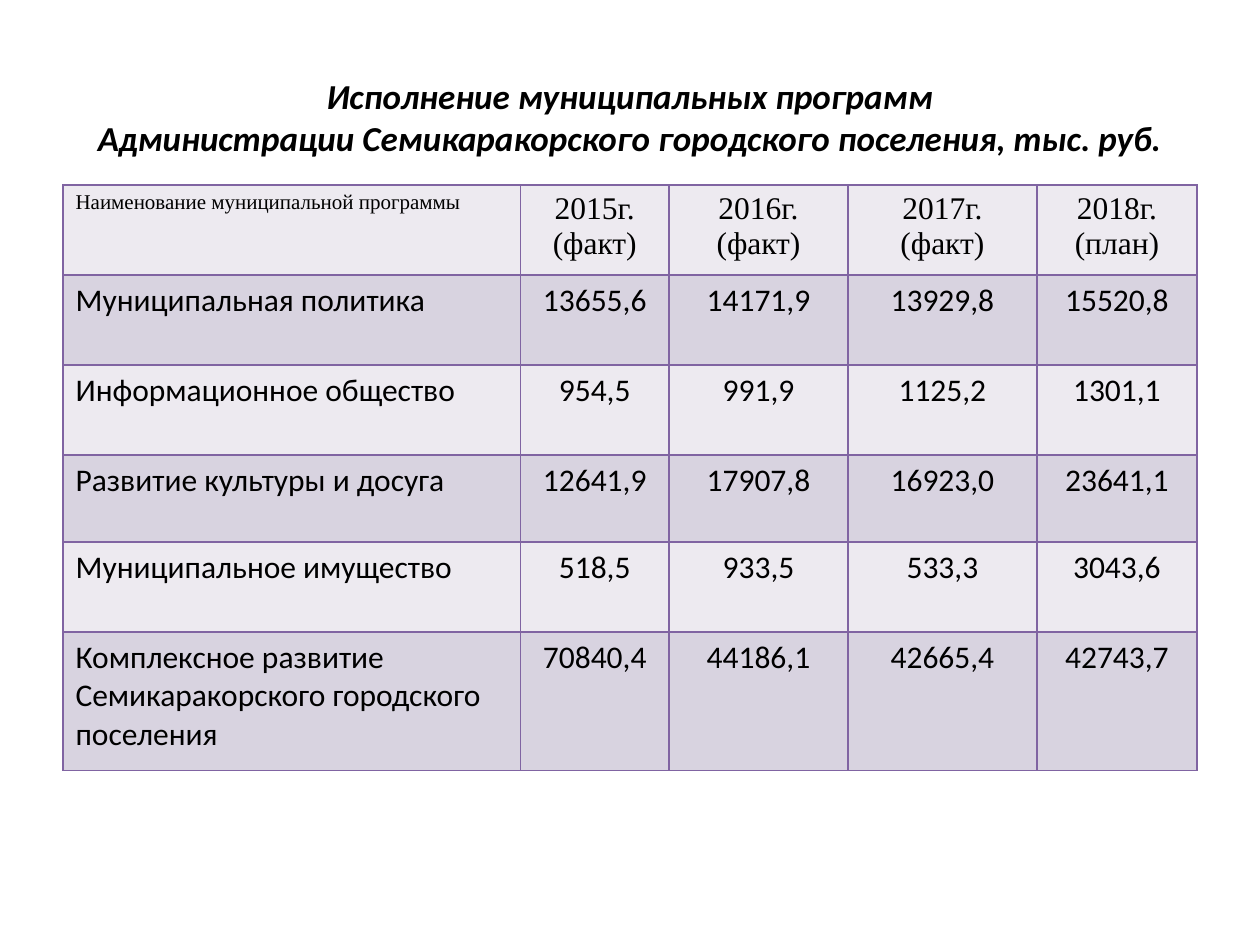
from lxml import etree
from pptx import Presentation
from pptx.dml.color import RGBColor
from pptx.enum.text import MSO_ANCHOR, PP_ALIGN
from pptx.oxml.ns import qn
from pptx.util import Pt

LEFT, CENTER = PP_ALIGN.LEFT, PP_ALIGN.CENTER
MIDDLE = MSO_ANCHOR.MIDDLE
BLACK = RGBColor(0x00, 0x00, 0x00)
PURPLE = RGBColor(0x80, 0x64, 0xA2)
PALE = RGBColor(0xED, 0xEA, 0xF0)
LILAC = RGBColor(0xD8, 0xD3, 0xE0)

HEAD = {"name": "Calibri", "size": Pt(20), "bold": True, "italic": True}
LABEL = {"name": "Times New Roman", "size": Pt(12), "bold": False}
YEAR = {"name": "Times New Roman", "size": Pt(18), "bold": False}
BODY = {"name": "Calibri", "size": Pt(18), "bold": False}

TITLE = ("Исполнение муниципальных программ\v"
         "Администрации Семикаракорского городского поселения, тыс. руб.")
ROWS = [
    ("Наименование муниципальной программы",
     "2015г. (факт)", "2016г. (факт)", "2017г. (факт)", "2018г. (план)"),
    ("Муниципальная политика", "13655,6", "14171,9", "13929,8", "15520,8"),
    ("Информационное общество", "954,5", "991,9", "1125,2", "1301,1"),
    ("Развитие культуры и досуга", "12641,9", "17907,8", "16923,0", "23641,1"),
    ("Муниципальное имущество", "518,5", "933,5", "533,3", "3043,6"),
    ("Комплексное развитие Семикаракорского городского поселения",
     "70840,4", "44186,1", "42665,4", "42743,7"),
]
WIDTHS = [261.4, 85, 102.2, 108, 91.4]
HEIGHTS = [51.5, 51.5, 51.5, 49.7, 51.5, 79.2]


def write(frame, text, align, style):
    """Fill a text frame with one styled paragraph."""
    para = frame.paragraphs[0]
    para.text = text
    para.alignment = align
    for run in para.runs:
        for key, value in style.items():
            setattr(run.font, key, value)
        run.font.color.rgb = BLACK


def edge(cell):
    """Draw the four borders of a cell."""
    props = cell._tc.get_or_add_tcPr()
    for spot, side in enumerate(("lnL", "lnR", "lnT", "lnB")):
        line = etree.Element(qn(f"a:{side}"), w=str(Pt(1)))
        fill = etree.SubElement(line, qn("a:solidFill"))
        etree.SubElement(fill, qn("a:srgbClr"), val=str(PURPLE))
        props.insert(spot, line)


def add_title(slide, left, top, width, height):
    """Place the centred heading in the given box."""
    box = slide.shapes.add_textbox(Pt(left), Pt(top), Pt(width), Pt(height))
    box.text_frame.word_wrap = True
    box.text_frame.vertical_anchor = MIDDLE
    write(box.text_frame, TITLE, CENTER, HEAD)


def add_grid(slide, left, top, width, height):
    """Place the programme table in the given box."""
    table = slide.shapes.add_table(
        len(ROWS), len(WIDTHS), Pt(left), Pt(top), Pt(width), Pt(height)).table
    for col, size in zip(table.columns, WIDTHS):
        col.width = Pt(width * size / sum(WIDTHS))
    for row, size in zip(table.rows, HEIGHTS):
        row.height = Pt(height * size / sum(HEIGHTS))
    for r, texts in enumerate(ROWS):
        for c, text in enumerate(texts):
            cell = table.cell(r, c)
            cell.fill.solid()
            cell.fill.fore_color.rgb = LILAC if r % 2 else PALE
            edge(cell)
            style = BODY if r else YEAR if c else LABEL
            write(cell.text_frame, text, CENTER if c else LEFT, style)


def main():
    """Build and save the slide."""
    deck = Presentation()
    deck.slide_width, deck.slide_height = Pt(720), Pt(540)
    slide = deck.slides.add_slide(deck.slide_layouts[6])
    add_title(slide, 36, 21.6, 648, 90)
    add_grid(slide, 36, 105.6, 648, 334.9)
    deck.save("out.pptx")


if __name__ == "__main__":
    main()
